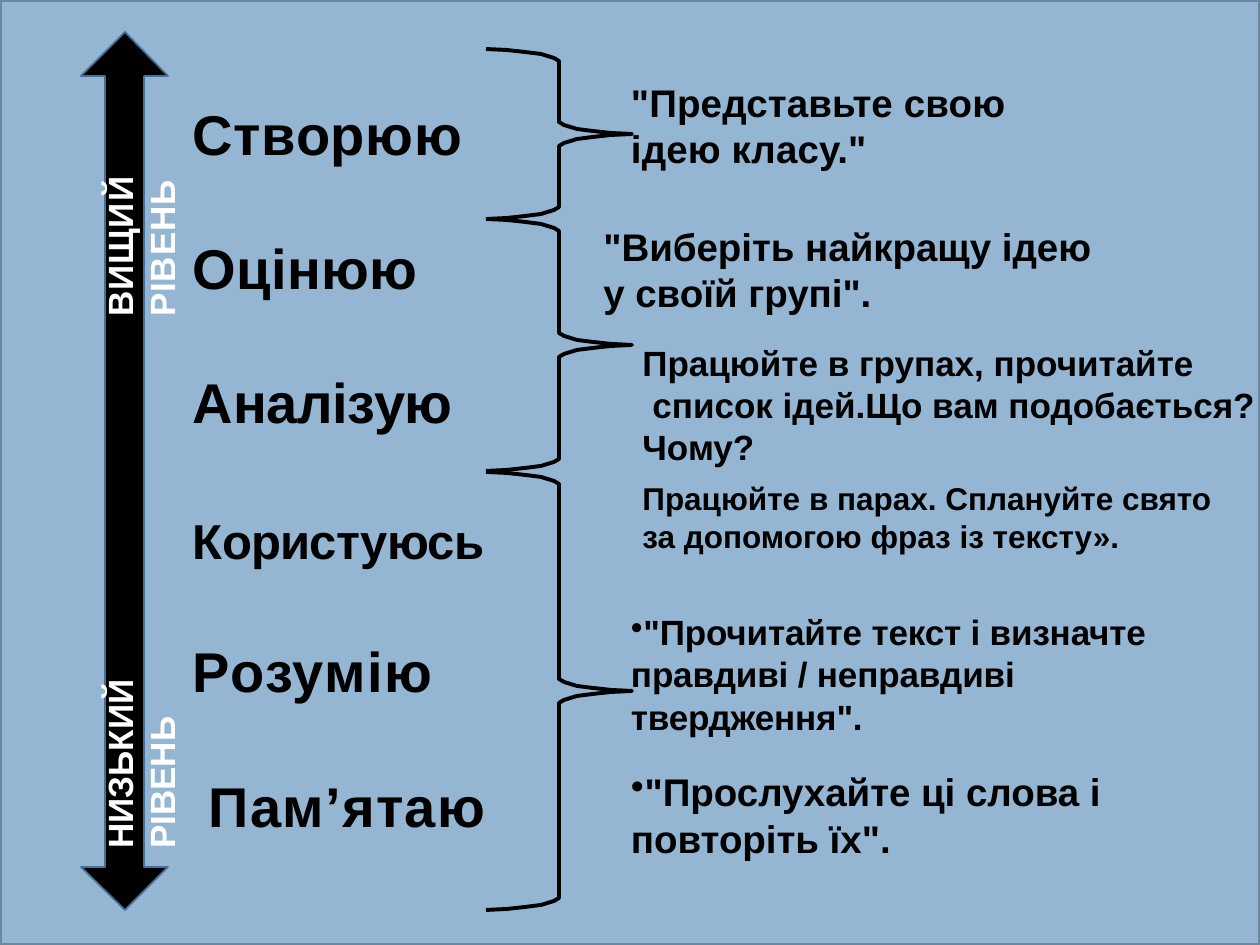
from pptx import Presentation
from pptx import util as u
from pptx.dml.color import RGBColor
from pptx.enum import shapes, text
from lxml import etree

PX = 914400 / 126
BLACK = RGBColor(0x00, 0x00, 0x00)
WHITE = RGBColor(0xFF, 0xFF, 0xFF)
SKY = RGBColor(0x94, 0xB6, 0xD2)
SLATE = RGBColor(0x6D, 0x87, 0x9B)
STEEL = RGBColor(0x41, 0x71, 0x9C)
BULLET_TAG = "{http://schemas.openxmlformats.org/drawingml/2006/main}bu"


def px(*lengths):
    return [round(length * PX) for length in lengths]


def write(frame, words, size=20, color=BLACK, before=0, lines=1.0, spacing=0, margin=0, bullet=None):
    paragraph = frame.add_paragraph() if frame.text else frame.paragraphs[0]
    paragraph.alignment = text.PP_ALIGN.LEFT
    paragraph.space_before = u.Pt(before)
    paragraph.line_spacing = lines
    properties = paragraph._p.get_or_add_pPr()
    properties.set("marL", str(px(margin)[0]))
    properties.set("indent", "0")
    if bullet:
        etree.SubElement(properties, BULLET_TAG + "Char").set("char", bullet)
    else:
        etree.SubElement(properties, BULLET_TAG + "None")
    run = paragraph.add_run()
    run.text = words
    run.font.name = "Arial"
    run.font.size = u.Pt(size)
    run.font.bold = True
    run.font.color.rgb = color
    run._r.get_or_add_rPr().set("spc", str(round(spacing * 100)))


prs = Presentation()
prs.slide_width, prs.slide_height = px(1260, 945)
slide = prs.slides.add_slide(prs.slide_layouts[1])
title, levels = slide.placeholders
title.element.getparent().remove(title.element)

backdrop = slide.shapes.add_shape(shapes.MSO_SHAPE.RECTANGLE, *px(0, 0, 1260, 945))
backdrop.shadow.inherit = False
backdrop.fill.solid()
backdrop.fill.fore_color.rgb = SKY
backdrop.line.color.rgb = SLATE
backdrop.line.width = u.Pt(2)

levels.element.getparent().append(levels.element)
levels.left, levels.top, levels.width, levels.height = px(192, 98, 325, 747)
frame = levels.text_frame
frame.word_wrap = True
frame.auto_size = text.MSO_AUTO_SIZE.SHAPE_TO_FIT_TEXT
frame.margin_left, frame.margin_top, frame.margin_right, frame.margin_bottom = px(0, 1, 0, 0)
for words, size, before, lines, spacing, margin in [
    ("Cтворюю", 32, 1, 1.0, 0.3, 1),
    ("Оцінюю", 32, 38.2, 1.0, 0.1, 1),
    ("Aналізую", 32, 0.2, 2.0, -0.2, 1),
    ("Користуюсь", 28, 9.4, 2.0, -0.4, 1),
    ("Розумію", 32, 0.2, 2.0, 0.8, 1),
    ("Пам’ятаю", 32, 0.2, 2.0, 0.7, 17),
]:
    write(frame, words, size=size, before=before, lines=lines, spacing=spacing, margin=margin)

curl = [(0, 0), (21, 1), (39, 3), (55, 5), (68, 9), (73, 12)]
for top, height in [(472, 438), (219, 252), (49, 170)]:
    half = height / 2
    upper = curl + [(146 - x, half - y) for x, y in reversed(curl)]
    lower = [(x, height - y) for x, y in reversed(upper)]
    points = [(486 + x, top + y) for x, y in upper + lower[1:]]
    builder = slide.shapes.build_freeform(*points[0], scale=PX)
    builder.add_line_segments(points[1:], close=False)
    brace = builder.convert_to_shape()
    brace.shadow.inherit = False
    brace.fill.background()
    brace.line.color.rgb = BLACK
    brace.line.width = u.Pt(2.25)

builder = slide.shapes.build_freeform(125, 910, scale=PX)
builder.add_line_segments([(81, 867), (105, 867), (105, 76), (81, 76), (125, 32),
                           (168, 76), (144, 76), (144, 867), (168, 867)])
arrow = builder.convert_to_shape()
arrow.shadow.inherit = False
arrow.fill.solid()
arrow.fill.fore_color.rgb = BLACK
arrow.line.color.rgb = STEEL
arrow.line.width = u.Pt(1)

for place, words, style in [
    ((630, 610, 586, 129), "\"Прочитайте текст і визначте правдиві / неправдиві твердження\".",
     dict(before=1, spacing=-0.1, bullet="•")),
    ((630, 78, 465, 95), "\"Представьте свою ідею класу.\"", dict(size=22, before=1, spacing=0.1)),
    ((630, 767, 547, 92), "\"Прослухайте ці слова і повторіть їх\".",
     dict(size=22, before=0.7, lines=1.01, bullet="•")),
    ((98, 635, 84, 215), "НИЗЬКИЙ РІВЕНЬ", dict(color=WHITE, before=2.4)),
    ((98, 92, 84, 226), "ВИЩИЙ РІВЕНЬ", dict(color=WHITE, before=2.4, spacing=0.5)),
]:
    box = slide.shapes.add_textbox(*px(*place))
    frame = box.text_frame
    frame.word_wrap = True
    frame.auto_size = text.MSO_AUTO_SIZE.SHAPE_TO_FIT_TEXT
    upright = style.get("color") == WHITE
    frame.margin_left, frame.margin_top, frame.margin_right, frame.margin_bottom = px(0, 4 if upright else 1, 0, 0)
    if upright:
        box.element.txBody.bodyPr.set("vert", "vert270")
    write(frame, words, margin=1, **style)

for place, size, sentences in [
    ((630, 473, 610, 127), 18, [("Працюйте в парах. Сплануйте свято", 0), ("за допомогою фраз із тексту».", 0)]),
    ((630, 335, 651, 140), 20, [("Працюйте в групах, прочитайте", 0),
                                ("список ідей.Що вам подобається?", 10), ("Чому?", 0)]),
    ((591, 217, 530, 106), 22, [("\"Виберіть найкращу ідею", 0), ("у своїй групі\".", 0)]),
]:
    frame = slide.shapes.add_textbox(*px(*place)).text_frame
    frame.word_wrap = False
    frame.auto_size = text.MSO_AUTO_SIZE.SHAPE_TO_FIT_TEXT
    for words, margin in sentences:
        write(frame, words, size=size, margin=margin)

prs.save("out.pptx")
